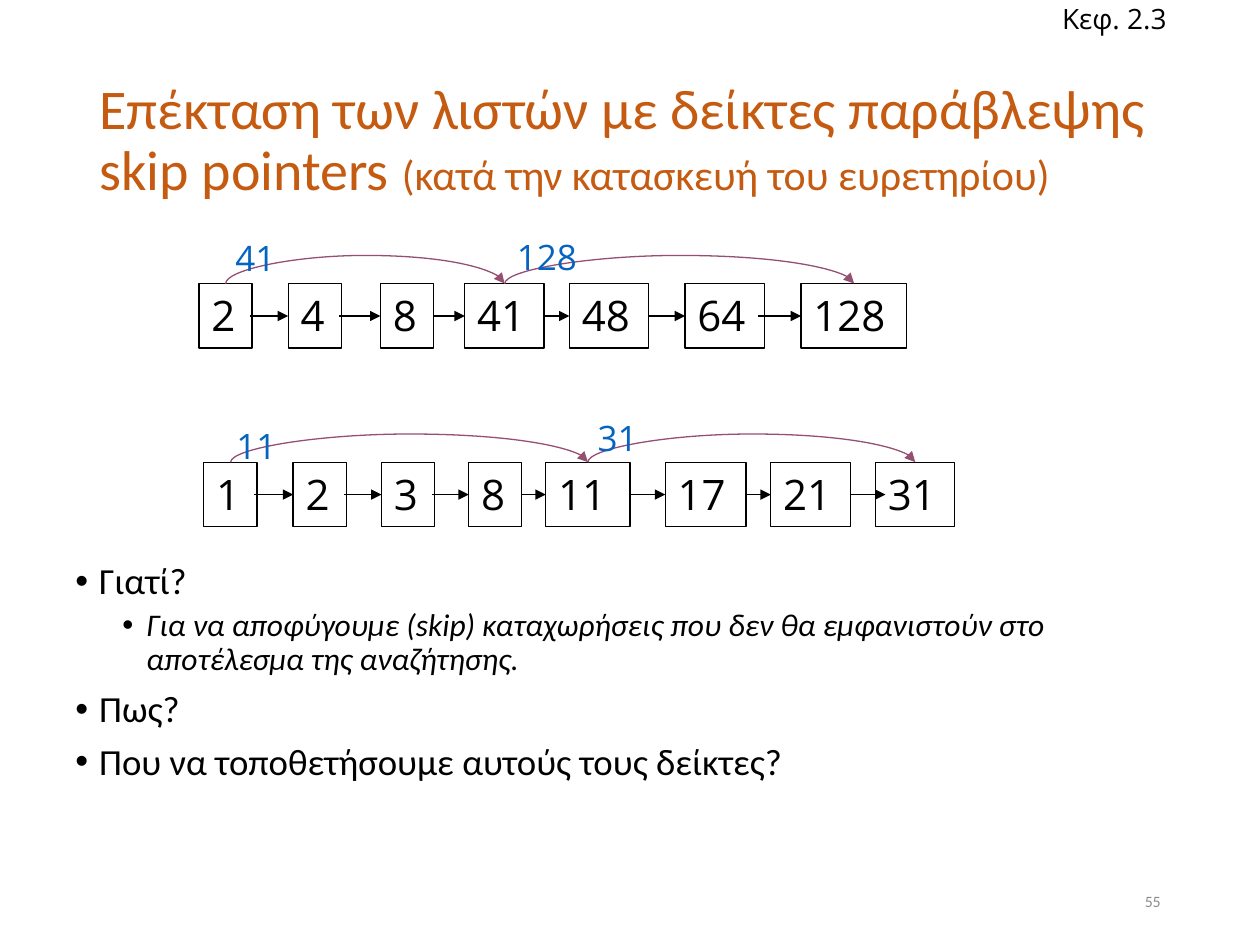
from dataclasses import dataclass

from lxml import etree
from pptx import Presentation
from pptx.dml.color import RGBColor
from pptx.enum.shapes import MSO_CONNECTOR, MSO_SHAPE
from pptx.enum.text import MSO_ANCHOR, MSO_AUTO_SIZE, PP_ALIGN
from pptx.oxml.ns import qn
from pptx.util import Cm, Emu, Pt

STRAIGHT, CURVE = MSO_CONNECTOR.STRAIGHT, MSO_CONNECTOR.CURVE
RECTANGLE = MSO_SHAPE.RECTANGLE
MIDDLE, TOP = MSO_ANCHOR.MIDDLE, MSO_ANCHOR.TOP
LEFT, RIGHT = PP_ALIGN.LEFT, PP_ALIGN.RIGHT
GROW, FIXED = MSO_AUTO_SIZE.SHAPE_TO_FIT_TEXT, MSO_AUTO_SIZE.NONE


@dataclass(frozen=True)
class Theme:
    """Fonts, colours, type sizes and line weight of the slide."""
    text_font: str = "Calibri"
    diagram_font: str = "Open Sans"
    ink: str = "000000"
    accent: str = "C55A11"
    skip_line: str = "954F72"
    skip_label: str = "0563C1"
    muted: str = "8C8C8C"
    title: int = 32
    subtitle: int = 24
    node: int = 24
    label: int = 20
    bullet: int = 21
    detail: int = 18
    chapter: int = 16
    number: int = 9
    line: float = 0.75


@dataclass(frozen=True)
class Node:
    """A list entry; tuck and reach lengthen its outgoing arrow at each end."""
    value: str
    left: float
    width: float
    tuck: float = 0
    reach: float = 0


@dataclass(frozen=True)
class Skip:
    """A skip pointer between two node indexes, with its label offset."""
    start: int
    end: int
    label_left: float
    label_top: float


THEME = Theme()
NODE_HEIGHT = 1.3
ARC_HEIGHT = 0.63
ARC_BASE = Emu(1588)

FIRST_LIST = [
    Node("2", 0, 1.07, tuck=0.05), Node("4", 1.8, 1.07, tuck=0.05), Node("8", 3.66, 1.07),
    Node("41", 5.36, 1.6), Node("48", 7.47, 1.6), Node("64", 9.8, 1.6, tuck=0.13),
    Node("128", 12.14, 2.13),
]
FIRST_SKIPS = [Skip(0, 3, -0.05, -1.07), Skip(3, 6, 0, -1.09)]
SECOND_LIST = [
    Node("1", 0, 1.07, tuck=0.05), Node("2", 1.8, 1.07, tuck=0.05),
    Node("3", 3.58, 1.07, tuck=0.05), Node("8", 5.34, 1.07), Node("11", 6.89, 1.7),
    Node("17", 9.3, 1.63), Node("21", 11.43, 1.6, reach=0.2), Node("31", 13.54, 1.6),
]
SECOND_SKIPS = [Skip(0, 4, -0.13, -0.89), Skip(4, 7, -0.05, -1.04)]
BULLETS = [
    ("Γιατί?", 0),
    ("Για να αποφύγουμε (skip) καταχωρήσεις που δεν θα εμφανιστούν στο "
     "αποτέλεσμα της αναζήτησης.", 1),
    ("Πως?", 0),
    ("Που να τοποθετήσουμε αυτούς τους δείκτες?", 0),
]


def add_text(paragraph, text, *, size, color=THEME.ink, font=THEME.text_font,
             italic=False, align=LEFT):
    """Append a formatted run to a paragraph."""
    paragraph.alignment = align
    run = paragraph.add_run()
    run.text = text
    run.font.name = font
    run.font.size = Pt(size)
    run.font.italic = italic
    run.font.bold = False
    run.font.color.rgb = RGBColor.from_string(color)


def add_text_box(slide, box, *, anchor=TOP, wrap=False):
    """Add an empty text box and return its text frame."""
    frame = slide.shapes.add_textbox(*map(Cm, box)).text_frame
    frame.word_wrap = wrap
    frame.auto_size = FIXED if wrap else GROW
    frame.vertical_anchor = anchor
    return frame


def style_connector(connector, color):
    """Give a connector its line, a triangular tip and no shadow."""
    connector.line.color.rgb = RGBColor.from_string(color)
    connector.line.width = Pt(THEME.line)
    line = connector.line._get_or_add_ln()
    etree.SubElement(line, qn("a:tailEnd"), type="triangle")
    etree.SubElement(connector.element.spPr, qn("a:effectLst"))


def add_arrow(slide, start, end, height):
    """Draw a horizontal arrow between neighbouring nodes."""
    arrow = slide.shapes.add_connector(STRAIGHT, Cm(start), Cm(height), Cm(end), Cm(height))
    style_connector(arrow, THEME.ink)


def add_arc(slide, start, end, base):
    """Draw a curved arrow above the nodes as a rotated connector."""
    center, half = (start + end) / 2, (end - start) / 2
    arc = slide.shapes.add_connector(
        CURVE, Cm(center) + ARC_BASE, Cm(base + half), Cm(center), Cm(base - half))
    properties = arc.element.spPr
    properties.find(qn("a:xfrm")).set("rot", str(90 * 60000))
    geometry = properties.find(qn("a:prstGeom"))
    adjustments = geometry.find(qn("a:avLst"))
    if adjustments is None:
        adjustments = etree.SubElement(geometry, qn("a:avLst"))
    bend = round(Cm(ARC_HEIGHT) / ARC_BASE * 100000)
    etree.SubElement(adjustments, qn("a:gd"), name="adj1", fmla=f"val {bend}")
    style_connector(arc, THEME.skip_line)


def add_node(slide, value, box):
    """Draw one outlined list entry."""
    shape = slide.shapes.add_shape(RECTANGLE, *map(Cm, box))
    shape.shadow.inherit = False
    shape.fill.background()
    shape.line.color.rgb = RGBColor.from_string(THEME.ink)
    shape.line.width = Pt(THEME.line)
    frame = shape.text_frame
    frame.word_wrap = False
    frame.auto_size = GROW
    frame.vertical_anchor = TOP
    add_text(frame.paragraphs[0], value, size=THEME.node, font=THEME.diagram_font)


def add_skip_list(slide, left, top, nodes, skips):
    """Draw a linked list with its skip pointers."""
    for node in nodes:
        add_node(slide, node.value, (left + node.left, top, node.width, NODE_HEIGHT))
    for node, following in zip(nodes, nodes[1:]):
        add_arrow(slide, left + node.left + node.width - node.tuck,
                  left + following.left + node.reach, top + NODE_HEIGHT / 2)
    for skip in skips:
        start, end = (left + nodes[index].left + nodes[index].width / 2
                      for index in (skip.start, skip.end))
        add_arc(slide, start, end, top)
        value = nodes[skip.end].value
        width = 0.5 + 0.45 * len(value)
        frame = add_text_box(slide, (start + skip.label_left, top + skip.label_top, width, 1.1))
        add_text(frame.paragraphs[0], value, size=THEME.label, color=THEME.skip_label,
                 font=THEME.diagram_font)


def add_title(slide, box):
    """Place and fill the title placeholder."""
    title = slide.shapes.title
    title.left, title.top, title.width, title.height = map(Cm, box)
    title.text_frame.vertical_anchor = MIDDLE
    title.text_frame.auto_size = FIXED
    paragraph = title.text_frame.paragraphs[0]
    paragraph.line_spacing = 0.9
    add_text(paragraph, "Επέκταση των λιστών με δείκτες παράβλεψης skip pointers ",
             size=THEME.title, color=THEME.accent)
    add_text(paragraph, "(κατά την κατασκευή του ευρετηρίου)",
             size=THEME.subtitle, color=THEME.accent)


def add_bullets(slide, box):
    """Write the two-level bullet list."""
    frame = add_text_box(slide, box, wrap=True)
    for index, (text, level) in enumerate(BULLETS):
        paragraph = frame.add_paragraph() if index else frame.paragraphs[0]
        paragraph.level = level
        paragraph.line_spacing = 0.9
        paragraph.space_before = Pt(3.8 if level else 7.5)
        add_text(paragraph, text, size=THEME.detail if level else THEME.bullet,
                 italic=bool(level))
        properties = paragraph._p.get_or_add_pPr()
        properties.set("marL", str(Cm(0.48 + 0.95 * level)))
        properties.set("indent", str(-Cm(0.48)))
        etree.SubElement(properties, qn("a:buFont"), typeface="Arial")
        etree.SubElement(properties, qn("a:buChar"), char="•")


def add_margin_notes(slide):
    """Write the chapter reference and the slide number."""
    chapter = add_text_box(slide, (21.16, -0.1, 2.8, 0.94), anchor=MIDDLE)
    add_text(chapter.paragraphs[0], "Κεφ. 2.3", size=THEME.chapter, font=THEME.diagram_font)
    number = add_text_box(slide, (17.93, 17.65, 5.72, 1.02), anchor=MIDDLE, wrap=True)
    add_text(number.paragraphs[0], "55", size=THEME.number, color=THEME.muted, align=RIGHT)


def main():
    """Build and save the slide."""
    presentation = Presentation()
    presentation.slide_width, presentation.slide_height = Cm(25.4), Cm(19.05)
    slide = presentation.slides.add_slide(presentation.slide_layouts[5])
    add_title(slide, (1.75, 1.02, 21.9, 3.68))
    add_bullets(slide, (1.27, 11.23, 22.86, 6.98))
    add_skip_list(slide, 4.01, 5.72, FIRST_LIST, FIRST_SKIPS)
    add_skip_list(slide, 4.11, 9.32, SECOND_LIST, SECOND_SKIPS)
    add_margin_notes(slide)
    presentation.save("out.pptx")


if __name__ == "__main__":
    main()
